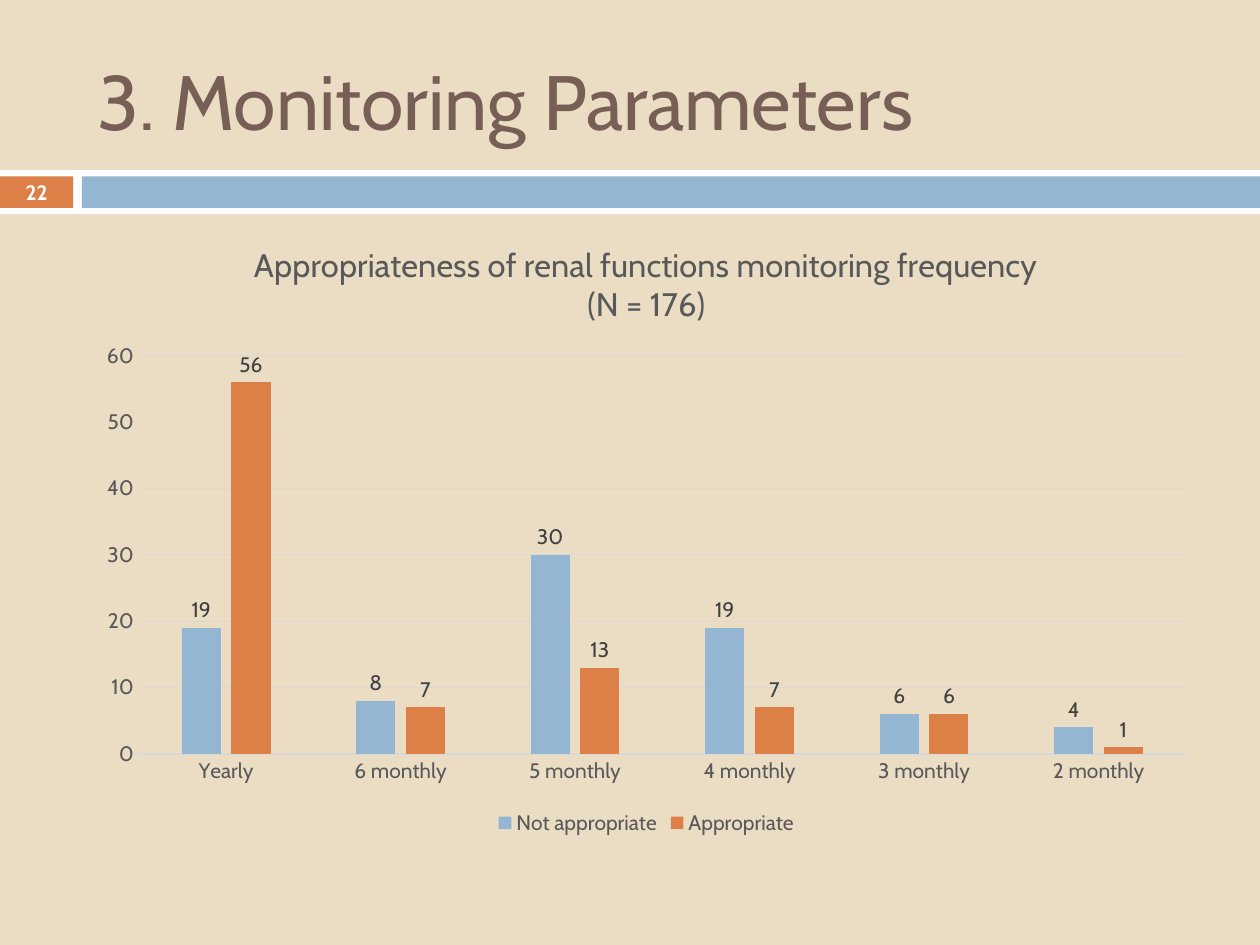
"""Build the slide on monitoring parameters with its clustered column chart."""
from pptx import Presentation
from pptx.chart.data import CategoryChartData
from pptx.dml.color import RGBColor
from pptx.enum.chart import XL_CHART_TYPE as ChartType, XL_LABEL_POSITION as LabelPos
from pptx.enum.chart import XL_LEGEND_POSITION as LegendPos, XL_TICK_MARK as TickMark
from pptx.enum.shapes import MSO_SHAPE as Shape
from pptx.enum.text import MSO_ANCHOR as Anchor, MSO_AUTO_SIZE as AutoSize, PP_ALIGN as Align
from pptx.util import Inches, Pt

SAND = RGBColor(0xEB, 0xDD, 0xC3)
WHITE = RGBColor(0xFF, 0xFF, 0xFF)
ORANGE = RGBColor(0xDD, 0x80, 0x47)
BLUE = RGBColor(0x94, 0xB6, 0xD2)
BROWN = RGBColor(0x77, 0x5F, 0x55)
GREY = RGBColor(0x59, 0x59, 0x59)
DARK_GREY = RGBColor(0x40, 0x40, 0x40)
LIGHT_GREY = RGBColor(0xD9, 0xD9, 0xD9)
FONT = "Cabin"


def style_font(font, size, color, bold=False):
    font.name, font.size, font.bold = FONT, Pt(size), bold
    font.color.rgb = color


def write_text(frame, text, size, color, bold=False, align=Align.LEFT):
    frame.text = text
    for paragraph in frame.paragraphs:
        paragraph.alignment = align
        for run in paragraph.runs:
            style_font(run.font, size, color, bold)


prs = Presentation()
prs.slide_width, prs.slide_height = Inches(10), Inches(7.5)
slide = prs.slides.add_slide(prs.slide_layouts[5])
slide.background.fill.solid()
slide.background.fill.fore_color.rgb = SAND

for left, top, width, height, color in [
    (0, 1.35, 10, 0.35, WHITE),
    (0, 1.4, 0.58, 0.25, ORANGE),
    (0.65, 1.4, 9.35, 0.25, BLUE),
]:
    band = slide.shapes.add_shape(
        Shape.RECTANGLE, Inches(left), Inches(top), Inches(width), Inches(height))
    band.shadow.inherit = False
    band.fill.solid()
    band.fill.fore_color.rgb = color
    band.line.fill.background()

title = slide.shapes.title
title.left, title.top = Inches(0.67), Inches(0.25)
title.width, title.height = Inches(8.92), Inches(1.08)
title.text_frame.vertical_anchor = Anchor.MIDDLE
title.text_frame.auto_size = AutoSize.NONE
write_text(title.text_frame, "3. Monitoring Parameters", size=44, color=BROWN)

page_number = slide.shapes.add_textbox(
    Inches(0), Inches(1.39), Inches(0.58), Inches(0.27)).text_frame
page_number.word_wrap = True
page_number.vertical_anchor = Anchor.MIDDLE
page_number.margin_top = page_number.margin_bottom = 0
write_text(page_number, "22", size=11.9, color=WHITE, bold=True, align=Align.CENTER)

frequencies = CategoryChartData()
frequencies.categories = ["Yearly", *(f"{months} monthly" for months in range(6, 1, -1))]
frequencies.add_series("Not appropriate", [19, 8, 30, 19, 6, 4])
frequencies.add_series("Appropriate", [56, 7, 13, 7, 6, 1])
chart = slide.shapes.add_chart(
    ChartType.COLUMN_CLUSTERED, Inches(0.67), Inches(1.75), Inches(8.92), Inches(4.92),
    frequencies).chart
style_font(chart.font, 10, GREY)
chart.has_title = True
chart.chart_title.include_in_layout = False
write_text(chart.chart_title.text_frame,
           "Appropriateness of renal functions monitoring frequency\n(N = 176)",
           size=18.6, color=GREY, align=Align.CENTER)

chart.has_legend = True
chart.legend.position = LegendPos.BOTTOM
chart.legend.include_in_layout = False
style_font(chart.legend.font, 12, GREY)

months_axis, count_axis = chart.category_axis, chart.value_axis
for axis in (months_axis, count_axis):
    axis.major_tick_mark = axis.minor_tick_mark = TickMark.NONE
    style_font(axis.tick_labels.font, 12, GREY)
count_axis.minimum_scale, count_axis.maximum_scale, count_axis.major_unit = 0, 60, 10
count_axis.format.line.fill.background()
for line in (months_axis.format.line, count_axis.major_gridlines.format.line):
    line.color.rgb = LIGHT_GREY
    line.width = Pt(0.75)

plot = chart.plots[0]
plot.gap_width, plot.overlap, plot.vary_by_categories = 219, -27, False
for series, color in zip(plot.series, (BLUE, ORANGE)):
    series.format.fill.solid()
    series.format.fill.fore_color.rgb = color
    series.invert_if_negative = False
    labels = series.data_labels
    labels.show_value = True
    labels.position = LabelPos.OUTSIDE_END
    style_font(labels.font, 12, DARK_GREY)

prs.save("out.pptx")
